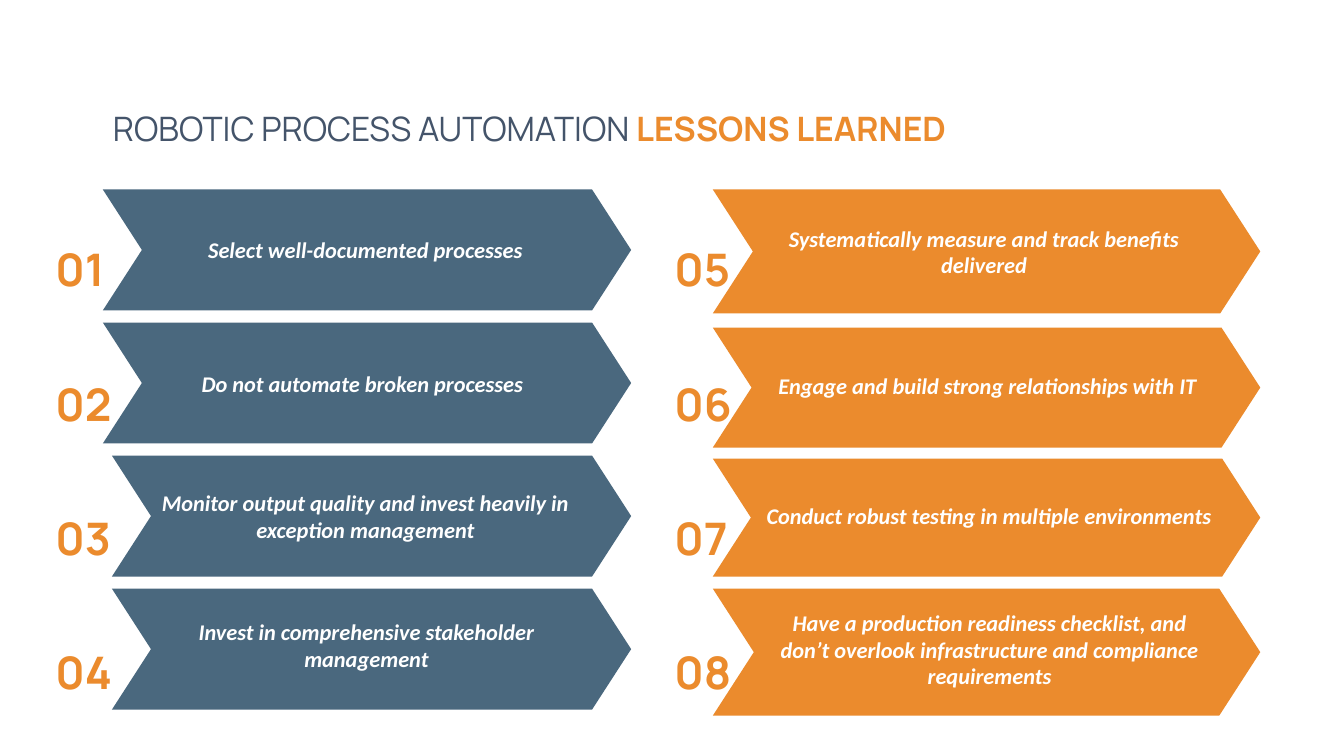
from pptx import Presentation
from pptx.dml.color import RGBColor as RGB
from pptx.enum.shapes import MSO_SHAPE as Shape
from pptx.enum.text import MSO_ANCHOR as Anchor, MSO_AUTO_SIZE as Fit, PP_ALIGN as Align
from pptx.util import Inches, Pt

BLUE, ORANGE, WHITE, SLATE = "4A687E", "EB8B2D", "FFFFFF", "44546A"
LESSON = dict(name="Calibri", size=Pt(16), bold=True, italic=True)
NUMBER = dict(name="Manrope", size=Pt(32), bold=True)
TITLE = dict(name="Manrope", size=Pt(24))
RIGHT = 7.07

# Arrow left, top, width, height; text left, top, width, height; wording
columns = [
    (BLUE, 0.45, [
        ((1.02, 1.88, 5.24, 1.2), (1.39, 2.29, 4.47, 0.37),
         "Select well-documented processes"),
        ((1.02, 3.2, 5.24, 1.2), (1.46, 3.62, 4.27, 0.37),
         "Do not automate broken processes"),
        ((1.11, 4.52, 5.15, 1.2), (1.39, 4.8, 4.47, 0.64),
         "Monitor output quality and invest heavily in exception management"),
        ((1.11, 5.84, 5.15, 1.2), (1.55, 6.08, 4.17, 0.91),
         "Invest in comprehensive stakeholder management"),
    ]),
    (ORANGE, 6.59, [
        ((RIGHT, 1.88, 5.43, 1.23), (7.44, 2.18, 4.64, 0.64),
         "Systematically measure and track benefits delivered"),
        ((RIGHT, 3.25, 5.43, 1.19), (7.46, 3.64, 4.67, 0.37),
         "Engage and build strong relationships with IT"),
        ((RIGHT, 4.55, 5.43, 1.17), (7.49, 4.93, 4.64, 0.37),
         "Conduct robust testing in multiple environments"),
        ((RIGHT, 5.84, 5.43, 1.26), (7.56, 5.99, 4.51, 0.91),
         "Have a production readiness checklist, and don’t overlook "
         "infrastructure and compliance requirements"),
    ]),
]


def style(font, color, look):
    for key, value in look.items():
        setattr(font, key, value)
    font.color.rgb = RGB.from_string(color)


def add_box(place):
    frame = slide.shapes.add_textbox(*map(Inches, place)).text_frame
    frame.word_wrap = True
    return frame


prs = Presentation()
prs.slide_width, prs.slide_height = Inches(13.33), Inches(7.5)
slide = prs.slides.add_slide(prs.slide_layouts[5])

title = slide.shapes.title
title.left, title.top, title.width, title.height = map(Inches, (1.02, 1.02, 11.73, 0.5))
head = title.text_frame
head.auto_size, head.vertical_anchor, head.word_wrap = Fit.NONE, Anchor.TOP, True
line = head.paragraphs[0]
line.alignment = Align.LEFT
for words, color, bold in [("ROBOTIC PROCESS AUTOMATION ", SLATE, False),
                           ("LESSONS LEARNED", ORANGE, True)]:
    run = line.add_run()
    run.text = words
    style(run.font, color, TITLE | dict(bold=bold))

count = 0
for color, left, lessons in columns:
    for place, spot, words in lessons:
        arrow = slide.shapes.add_shape(Shape.CHEVRON, *map(Inches, place))
        arrow.adjustments[0] = 0.323
        arrow.shadow.inherit = False
        arrow.fill.solid()
        arrow.fill.fore_color.rgb = RGB.from_string(color)
        arrow.line.fill.background()
        para = add_box(spot).paragraphs[0]
        para.text, para.alignment = words, Align.CENTER
        style(para.font, WHITE, LESSON)

    frame = add_box((left, 1.55, 0.82, 5.26))
    frame.text = "\n".join(f"{count + n:02}" for n in range(1, len(lessons) + 1))
    count += len(lessons)
    for para in frame.paragraphs:
        para.line_spacing = 2.5
        style(para.font, ORANGE, NUMBER)

prs.save("out.pptx")
